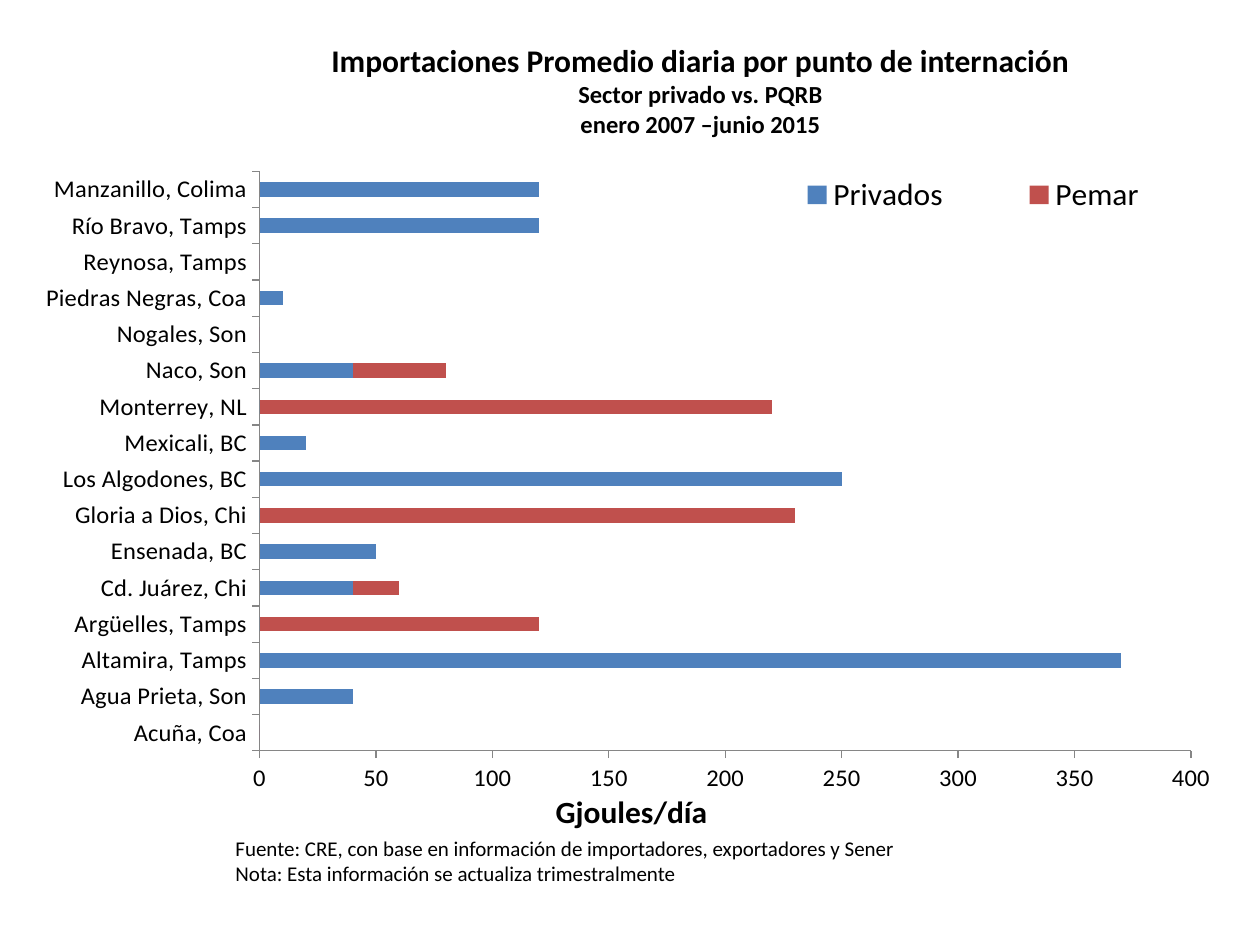
from dataclasses import dataclass
from lxml import etree
from pptx import Presentation
from pptx import util as u
from pptx.chart.data import CategoryChartData
from pptx.dml.color import RGBColor as Rgb
from pptx.enum import chart as ch, text as tx
from pptx.oxml.ns import qn


@dataclass(frozen=True)
class Theme:
    font: str = "Calibri"
    ink: str = "000000"
    axis: str = "868686"
    bars: tuple = ("4F81BD", "C0504D")
    head: int = 18
    sub: int = 14
    note: int = 12


T = Theme()
ROWS = [
    ("Acuña, Coa", 0, 0),
    ("Agua Prieta, Son", 40, 0),
    ("Altamira, Tamps", 370, 0),
    ("Argüelles, Tamps", 0, 120),
    ("Cd. Juárez, Chi", 40, 20),
    ("Ensenada, BC", 50, 0),
    ("Gloria a Dios, Chi", 0, 230),
    ("Los Algodones, BC", 250, 0),
    ("Mexicali, BC", 20, 0),
    ("Monterrey, NL", 0, 220),
    ("Naco, Son", 40, 40),
    ("Nogales, Son", 0, 0),
    ("Piedras Negras, Coa", 10, 0),
    ("Reynosa, Tamps", 0, 0),
    ("Río Bravo, Tamps", 120, 0),
    ("Manzanillo, Colima", 120, 0),
]


def style(font, size, bold=False):
    font.name = T.font
    font.size = u.Pt(size)
    font.bold = bold
    font.color.rgb = Rgb.from_string(T.ink)


def write(slide, box, lines, bold=False, align=tx.PP_ALIGN.LEFT):
    frame = slide.shapes.add_textbox(*map(u.Inches, box)).text_frame
    frame.word_wrap = True
    frame.auto_size = tx.MSO_AUTO_SIZE.SHAPE_TO_FIT_TEXT
    for i, (line, size) in enumerate(lines):
        para = frame.add_paragraph() if i else frame.paragraphs[0]
        para.alignment = align
        run = para.add_run()
        run.text = line
        style(run.font, size, bold)


def place(node, index, inner=False, **parts):
    for old in node.findall(qn("c:layout")):
        node.remove(old)
    layout = etree.Element(qn("c:layout"))
    node.insert(index, layout)
    manual = etree.SubElement(layout, qn("c:manualLayout"))
    if inner:
        etree.SubElement(manual, qn("c:layoutTarget")).set("val", "inner")
    for tag in ("xMode", "yMode"):
        etree.SubElement(manual, qn("c:" + tag)).set("val", "edge")
    for tag, val in parts.items():
        etree.SubElement(manual, qn("c:" + tag)).set("val", str(val))


def draw_chart(slide, box):
    names, *sets = zip(*ROWS)
    data = CategoryChartData()
    data.categories = names
    for name, vals in zip(("Privados", "Pemar"), sets):
        data.add_series(name, vals)
    chart = slide.shapes.add_chart(
        ch.XL_CHART_TYPE.BAR_STACKED, *map(u.Inches, box), data).chart
    style(chart.font, T.head)
    chart.has_title = False

    plot = chart.plots[0]
    plot.gap_width = 150
    plot.overlap = 100
    plot.vary_by_categories = False
    for series, color in zip(plot.series, T.bars):
        series.format.fill.solid()
        series.format.fill.fore_color.rgb = Rgb.from_string(color)
        series.invert_if_negative = False

    for axis in (chart.category_axis, chart.value_axis):
        style(axis.tick_labels.font, T.sub)
        axis.has_major_gridlines = False
        axis.major_tick_mark = ch.XL_TICK_MARK.OUTSIDE
        axis.minor_tick_mark = ch.XL_TICK_MARK.NONE
        axis.format.line.color.rgb = Rgb.from_string(T.axis)
        axis.format.line.width = u.Pt(0.75)
    scale = chart.value_axis
    scale.minimum_scale, scale.maximum_scale, scale.major_unit = 0, 400, 50
    title = scale.axis_title
    title.text_frame.text = "Gjoules/día"
    style(title.text_frame.paragraphs[0].runs[0].font, T.head, True)

    chart.has_legend = True
    legend = chart.legend
    legend.position = ch.XL_LEGEND_POSITION.RIGHT
    legend.include_in_layout = False
    style(legend.font, T.head)

    area = plot._element.getparent()
    place(area, 0, True, x=0.2, y=0.03, w=0.77, h=0.86)
    place(title._element, 1, x=0.44, y=0.94)
    place(legend._element, 1, x=0.59, y=0.03, w=0.4, h=0.07)


def main():
    deck = Presentation()
    deck.slide_width, deck.slide_height = u.Inches(10), u.Inches(7.5)
    slide = deck.slides.add_slide(deck.slide_layouts[6])
    write(slide, (2.03, 0.28, 7.06, 0.88), [
        ("Importaciones Promedio diaria por punto de internación", T.head),
        ("Sector privado vs. PQRB", T.sub),
        ("enero 2007 –junio 2015", T.sub),
    ], bold=True, align=tx.PP_ALIGN.CENTER)
    draw_chart(slide, (0.14, 1.2, 9.6, 5.47))
    write(slide, (1.77, 6.58, 7.82, 0.91), [
        ("Fuente: CRE, con base en información de importadores, "
         "exportadores y Sener", T.note),
        ("Nota: Esta información se actualiza trimestralmente", T.note),
    ])
    deck.save("out.pptx")


if __name__ == "__main__":
    main()
